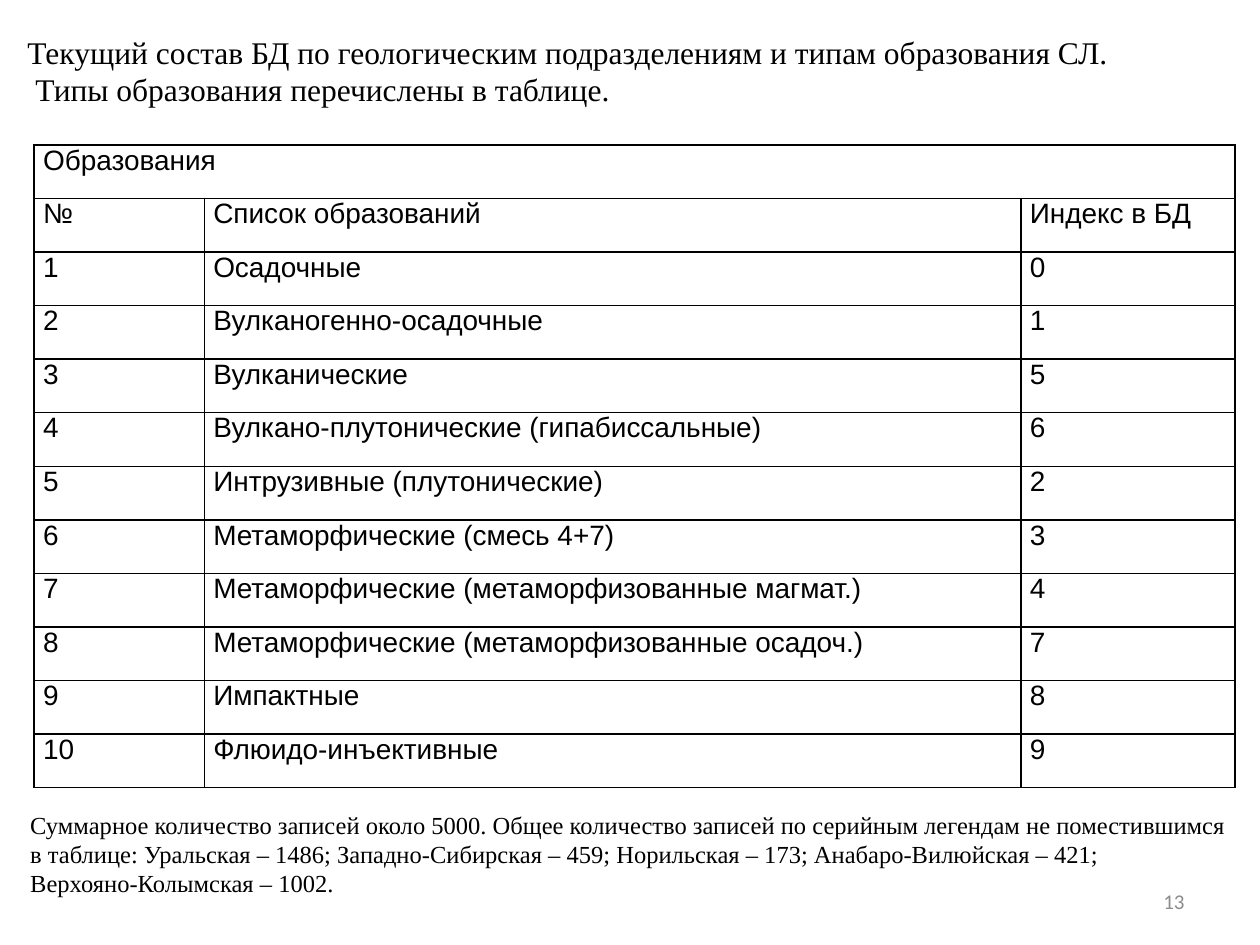
from lxml import etree
from pptx import Presentation
from pptx.dml.color import RGBColor
from pptx.enum.text import MSO_ANCHOR, MSO_AUTO_SIZE, PP_ALIGN
from pptx.oxml.ns import qn
from pptx.util import Cm, Pt

TOP, MIDDLE = MSO_ANCHOR.TOP, MSO_ANCHOR.MIDDLE
LEFT, RIGHT = PP_ALIGN.LEFT, PP_ALIGN.RIGHT
FIXED = MSO_AUTO_SIZE.NONE

COLORS = {"ink": "000000", "page": "8C8C8C"}
SERIF, SANS, PLAIN = "Times New Roman", "Arial", "Calibri"

TITLE = [
    "Текущий состав БД по геологическим подразделениям и типам образования СЛ.",
    " Типы образования перечислены в таблице.",
]
HEADS = ["№", "Список образований", "Индекс в БД"]
TYPES = [
    ("Осадочные", 0),
    ("Вулканогенно-осадочные", 1),
    ("Вулканические", 5),
    ("Вулкано-плутонические (гипабиссальные)", 6),
    ("Интрузивные (плутонические)", 2),
    ("Метаморфические (смесь 4+7)", 3),
    ("Метаморфические (метаморфизованные магмат.)", 4),
    ("Метаморфические (метаморфизованные осадоч.)", 7),
    ("Импактные", 8),
    ("Флюидо-инъективные", 9),
]
NOTE = [
    "Суммарное количество записей около 5000. Общее количество записей "
    "по серийным легендам не поместившимся",
    "в таблице: Уральская – 1486; Западно-Сибирская – 459; "
    "Норильская – 173; Анабаро-Вилюйская – 421;",
    "Верхояно-Колымская – 1002.",
]
WIDTHS = [3.43, 16.46, 4.32]
ROW = 1.08


def write(frame, lines, size=16, font=SANS, color="ink", align=LEFT):
    """Fill a text frame, one paragraph per line."""
    for i, line in enumerate(lines):
        para = frame.paragraphs[0] if i == 0 else frame.add_paragraph()
        para.alignment = align
        run = para.add_run()
        run.text = line
        run.font.size = Pt(size)
        run.font.name = font
        run.font.color.rgb = RGBColor.from_string(COLORS[color])


def place(shape, left, top, width, height, anchor=TOP):
    """Set the frame of a text shape and return its text frame."""
    shape.left, shape.top = Cm(left), Cm(top)
    shape.width, shape.height = Cm(width), Cm(height)
    frame = shape.text_frame
    frame.word_wrap = True
    frame.auto_size = FIXED
    frame.vertical_anchor = anchor
    return frame


def add_text(slide, lines, box, **form):
    shape = slide.shapes.add_textbox(0, 0, 0, 0)
    write(place(shape, *box, anchor=MIDDLE), lines, **form)


def style(cell):
    """Give a cell thin borders, no fill and tight margins."""
    props = cell._tc.get_or_add_tcPr()
    for side in ("a:lnL", "a:lnR", "a:lnT", "a:lnB"):
        line = etree.SubElement(props, qn(side), w=str(Pt(1)))
        fill = etree.SubElement(line, qn("a:solidFill"))
        etree.SubElement(fill, qn("a:srgbClr"), val=COLORS["ink"])
    cell.fill.background()
    cell.margin_left = cell.margin_right = Cm(0.18)
    cell.margin_top = cell.margin_bottom = 0


def add_grid(slide, left, top):
    rows = [["Образования"], HEADS]
    rows += [[str(n), name, str(code)]
             for n, (name, code) in enumerate(TYPES, 1)]
    table = slide.shapes.add_table(
        len(rows), len(WIDTHS), Cm(left), Cm(top),
        Cm(sum(WIDTHS)), Cm(ROW * len(rows))).table
    table.first_row = table.horz_banding = False
    for col, width in zip(table.columns, WIDTHS):
        col.width = Cm(width)
    for r, row in enumerate(rows):
        table.rows[r].height = Cm(ROW)
        for c in range(len(WIDTHS)):
            style(table.cell(r, c))
        for c, text in enumerate(row):
            write(table.cell(r, c).text_frame, [text])
    # Heading row spans the whole width
    table.cell(0, 0).merge(table.cell(0, len(WIDTHS) - 1))


def main():
    deck = Presentation()
    deck.slide_width, deck.slide_height = Cm(25.4), Cm(19.05)
    slide = deck.slides.add_slide(deck.slide_layouts[5])

    # Title
    frame = place(slide.shapes.title, 0.3, 0.53, 24.61, 2.3)
    write(frame, TITLE, size=18, font=SERIF)

    # Table of formation types
    add_grid(slide, 0.69, 2.92)

    # Totals and page number
    add_text(slide, NOTE, (0.36, 16.18, 24.94, 2.06), size=14, font=SERIF)
    add_text(slide, ["13"], (18.2, 17.66, 5.93, 1.01),
             size=12, font=PLAIN, color="page", align=RIGHT)

    deck.save("out.pptx")


if __name__ == "__main__":
    main()
